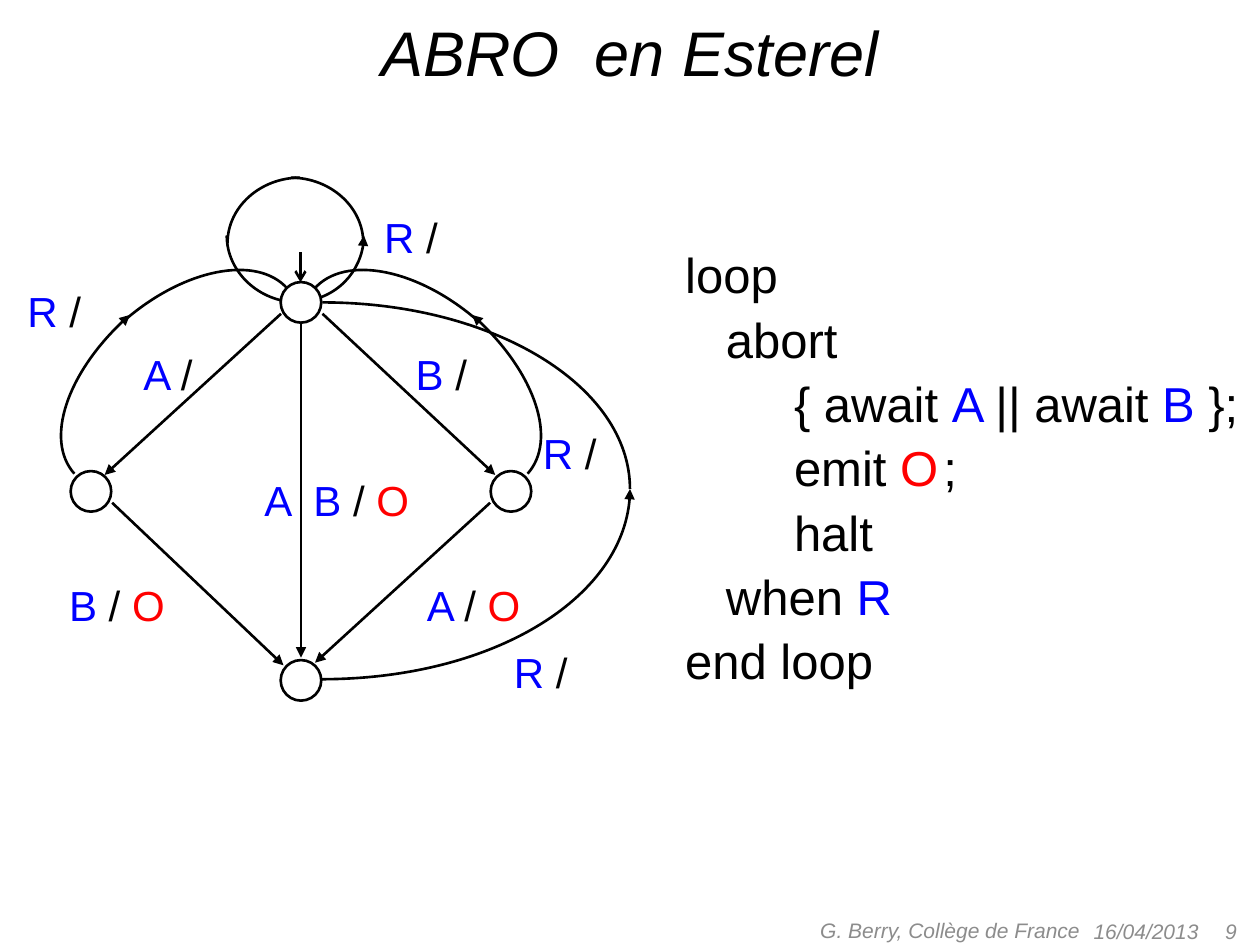
from lxml import etree
from pptx import Presentation
from pptx.dml.color import RGBColor
from pptx.enum.shapes import MSO_CONNECTOR, MSO_SHAPE
from pptx.enum.text import MSO_ANCHOR, PP_ALIGN
from pptx.oxml.ns import qn
from pptx.util import Pt

BLACK = RGBColor(0x00, 0x00, 0x00)
WHITE = RGBColor(0xFF, 0xFF, 0xFF)
BLUE = RGBColor(0x00, 0x00, 0xFF)
RED = RGBColor(0xFF, 0x00, 0x00)
GRAY = RGBColor(0x8C, 0x8C, 0x8C)
SIGNAL_COLORS = {"A": BLUE, "B": BLUE, "R": BLUE, "O": RED}

STRAIGHT = MSO_CONNECTOR.STRAIGHT
OVAL = MSO_SHAPE.OVAL
TOP, MIDDLE = MSO_ANCHOR.TOP, MSO_ANCHOR.MIDDLE
LEFT, CENTER, RIGHT = PP_ALIGN.LEFT, PP_ALIGN.CENTER, PP_ALIGN.RIGHT

presentation = Presentation()
presentation.slide_width, presentation.slide_height = Pt(720), Pt(540)
slide = presentation.slides.add_slide(presentation.slide_layouts[6])
shapes = slide.shapes


def add_text(box, lines, size, color=BLACK, italic=False, align=LEFT, anchor=TOP, wrap=False):
    """Add a text box; words that name a signal take the signal's colour."""
    text_frame = shapes.add_textbox(*(Pt(length) for length in box)).text_frame
    text_frame.word_wrap = wrap
    text_frame.vertical_anchor = anchor
    for index, line in enumerate(lines):
        paragraph = text_frame.add_paragraph() if index else text_frame.paragraphs[0]
        paragraph.alignment = align
        words = line.split(" ")
        for position, word in enumerate(words):
            run = paragraph.add_run()
            run.text = word if position == len(words) - 1 else word + " "
            run.font.name, run.font.size, run.font.italic = "Arial", Pt(size), italic
            run.font.color.rgb = SIGNAL_COLORS.get(word, color)
    return text_frame


def style_line(shape, arrow=None):
    """Draw a thin black line without shadow, with an arrowhead at its end if asked."""
    shape.line.color.rgb = BLACK
    shape.line.width = Pt(1.5)
    if arrow:
        etree.SubElement(shape.line._get_or_add_ln(), qn("a:tailEnd"), type=arrow)
    properties = shape.element.spPr
    if properties.find(qn("a:effectLst")) is None:
        etree.SubElement(properties, qn("a:effectLst"))


# Title
add_text((18, 3.6, 684, 51), ["ABRO  en Esterel"], 36, italic=True,
         align=CENTER, anchor=MIDDLE, wrap=True)

# Footer: date, page number, author
for box, text, align in [
    ((617.8, 517.7, 168, 28.8), "16/04/2013", LEFT),
    ((545.8, 517.7, 168, 28.8), "9", RIGHT),
    ((332, 517, 292.3, 28.8), "G. Berry, Collège de France", RIGHT),
]:
    add_text(box, [text], 12, GRAY, italic=True, align=align, anchor=MIDDLE, wrap=True)

# Esterel program, indented by nesting depth
program = [
    (0, "loop"),
    (23.3, "abort"),
    (62.2, "{ await A || await B };"),
    (62.2, "emit O"),
    (62.2, "halt"),
    (23.3, "when R"),
    (0, "end loop"),
]
code = add_text((384.5, 134.6, 335.5, 256.3), [line for _, line in program], 28)
for paragraph, (indent, _) in zip(code.paragraphs, program):
    paragraph.line_spacing = 1.05
    paragraph.space_before = Pt(1.5)
    paragraph._p.get_or_add_pPr().set("marL", str(Pt(indent)))
for text, size in [(" ", 11), (";", 28)]:
    run = code.paragraphs[3].add_run()
    run.text = text
    run.font.name, run.font.size = "Arial", Pt(size)
    run.font.color.rgb = BLACK

# Reset transitions: cubic curves, each with its arrowhead at the last point
curves = [
    ([(360, 279.4), (360, 220.3), (281.5, 172.8), (184.3, 172.8)], False),
    ([(183.6, 388.1), (280.8, 388.1), (360, 339.8), (360, 279.4)], True),
]
# Symmetric pairs: left curve, sum of mirrored x values, arrow on left, arrow on right
for points, mirror, left_arrow, right_arrow in [
    ([(130, 139), (130, 118.1), (149, 101.5), (171.4, 101.5)], 337.6, False, False),
    ([(170.6, 172.8), (148.2, 172.8), (129.6, 155.5), (129.6, 134.6)], 337.6, False, True),
    ([(42.5, 270.7), (25.2, 251.3), (39.6, 210.2), (74.2, 180)], 344, True, True),
    ([(70.6, 183.6), (105.1, 153.4), (146.9, 145.4), (164.2, 164.9)], 344, False, False),
]:
    curves.append((points, left_arrow))
    curves.append(([(mirror - x, y) for x, y in points], right_arrow))

for points, arrow in curves:
    start, *controls = [(Pt(x), Pt(y)) for x, y in points]
    builder = shapes.build_freeform(*start)
    builder.add_line_segments(controls, close=False)
    curve = builder.convert_to_shape()
    curve.fill.background()
    style_line(curve, "triangle" if arrow else None)
    # Turn the three straight segments into one Bézier segment
    outline = curve.element.find(".//" + qn("a:path"))
    bezier = etree.SubElement(outline, qn("a:cubicBezTo"))
    for segment in outline.findall(qn("a:lnTo")):
        bezier.append(segment[0])
        outline.remove(segment)

# States
DIAMETER = 23.2
for center_x, center_y in [(172, 172.8), (52, 280.8), (292, 280.8), (172, 388.8)]:
    state = shapes.add_shape(OVAL, Pt(center_x - DIAMETER / 2), Pt(center_y - DIAMETER / 2),
                             Pt(DIAMETER), Pt(DIAMETER))
    state.shadow.inherit = False
    state.fill.solid()
    state.fill.fore_color.rgb = WHITE
    style_line(state)

# Straight transitions and the initial arrow
for ends, arrow in [
    ((160.6, 179.3, 59.8, 271.4), "triangle"),
    ((184.3, 179.3, 283, 271.4), "triangle"),
    ((280.1, 287.3, 180, 378.7), "triangle"),
    ((64.1, 287.3, 162, 380.2), "triangle"),
    ((172, 185, 172, 375.8), "triangle"),
    ((171.7, 144, 171.7, 161.3), "arrow"),
]:
    style_line(shapes.add_connector(STRAIGHT, *(Pt(length) for length in ends)), arrow)

# Transition labels
for left, top, width, text in [
    (74.9, 195.8, 42.5, "A /"),
    (230.4, 195.8, 43.9, "B /"),
    (236.9, 327.6, 68.4, "A / O"),
    (32.4, 327.6, 69.1, "B / O"),
    (144, 267.8, 104.4, "A  B / O"),
    (212.4, 117.4, 45.4, "R /"),
    (8.6, 159.8, 45.4, "R /"),
    (303.1, 240.5, 45.4, "R /"),
    (286.6, 365.8, 45.4, "R /"),
]:
    add_text((left, top, width, 36), [text], 24)

presentation.save("out.pptx")
